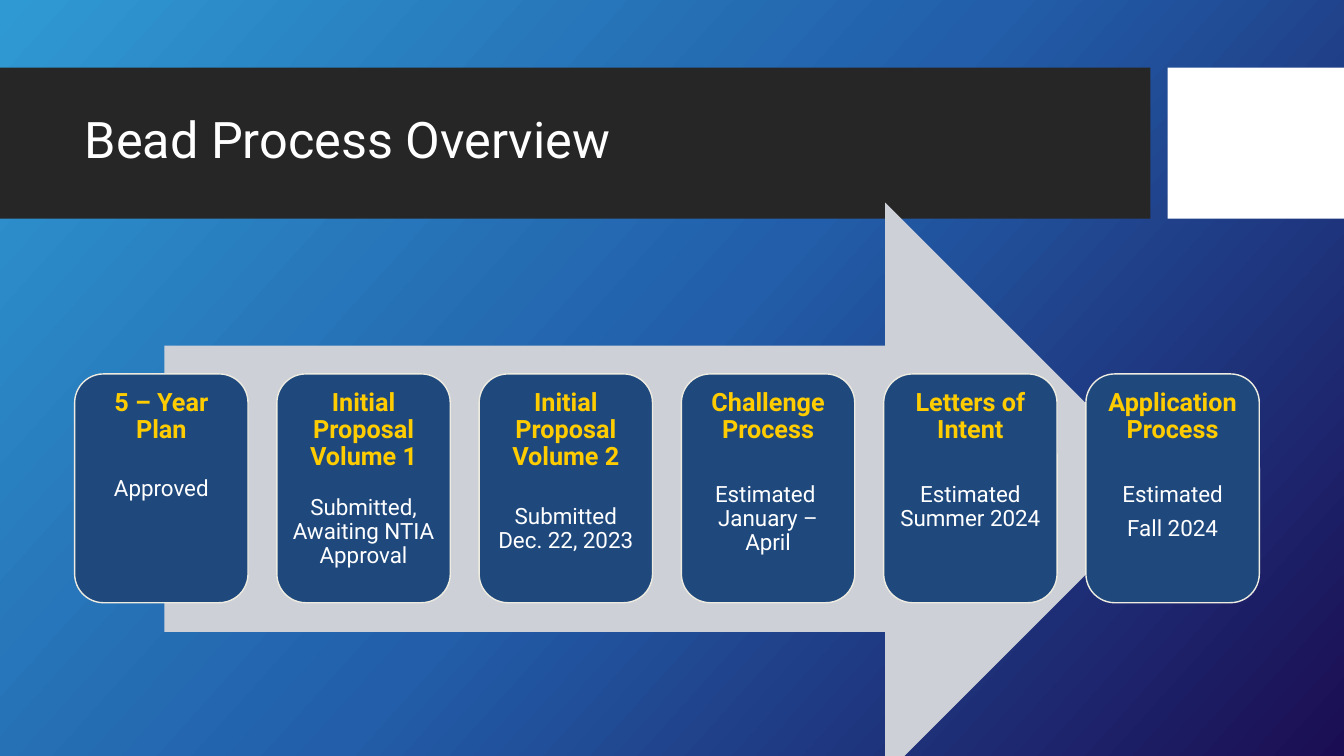
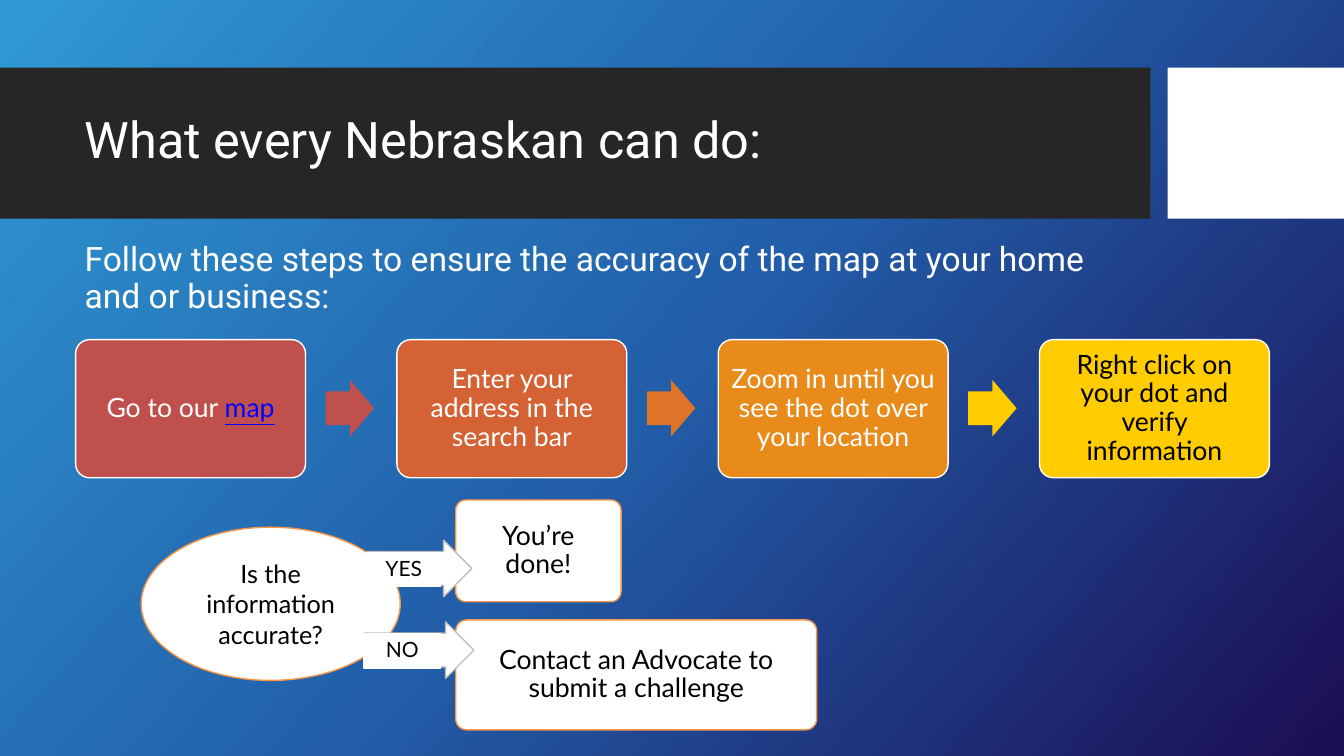
from copy import deepcopy

from pptx import Presentation
from pptx.dml.color import RGBColor
from pptx.enum.shapes import MSO_SHAPE
from pptx.enum.text import MSO_ANCHOR, MSO_AUTO_SIZE, PP_ALIGN
from pptx.util import Inches, Pt

WHITE, BLACK, DARK = "FFFFFF", "000000", "262626"
NAVY, CREAM, GOLD = "1F497D", "EEECE1", "FFCC00"
RED, RUST, AMBER, ORANGE = "C0504D", "D46234", "E98B1A", "F79646"
SILVER, GREY, BLUE = "CDD0D7", "BDBDBD", "0000FF"
GLOW = [(0, "2F99D3"), (0.5, "225EA9"), (1, "1B0D53")]
HEAD, BODY = "Roboto", "Lato"

CARDS = [
    ("5 – Year Plan", 24, ["Approved"], 0),
    ("Initial Proposal Volume 1", 18, ["Submitted, Awaiting NTIA Approval"], 0),
    ("Initial Proposal Volume 2", 24, ["Submitted Dec. 22, 2023"], 0),
    ("Challenge Process", 28, ["Estimated ", "January – April"], 0),
    ("Letters of Intent", 28, ["Estimated", "Summer 2024"], 0),
    ("Application Process", 28, ["Estimated", "Fall 2024"], 7),
]
STEPS = [
    (["Go to our ", "map"], RED, WHITE, RED),
    (["Enter your address in the search bar"], RUST, WHITE, "DF7327"),
    (["Zoom in until you see the dot over your location"], AMBER, WHITE, GOLD),
    (["Right click on your dot and verify information"], GOLD, BLACK, None),
]


def color(code):
    """Turn a hex string into a colour."""
    return RGBColor.from_string(code)


def frame(shape, inset=None, anchor=MSO_ANCHOR.MIDDLE):
    """Set wrap, anchor and insets of a text frame and return it."""
    text = shape.text_frame
    text.word_wrap = True
    text.auto_size = MSO_AUTO_SIZE.NONE
    text.vertical_anchor = anchor
    if inset is not None:
        text.margin_left = text.margin_right = Inches(inset)
        text.margin_top = text.margin_bottom = Inches(inset)
    return text


def style(para, align=PP_ALIGN.CENTER, gap=0, lines=0.9):
    """Set alignment and spacing of a paragraph and return it."""
    para.alignment = align
    para.line_spacing = lines
    para.space_before = Pt(gap)
    para.space_after = Pt(0)
    return para


def write(para, text, size, ink, font=BODY, bold=False, under=False):
    """Add one formatted run."""
    run = para.add_run()
    run.text = text
    run.font.size = Pt(size)
    run.font.name = font
    run.font.bold = bold
    run.font.underline = under
    run.font.color.rgb = color(ink)


def block(slide, kind, box, fill, line=None, adjust=()):
    """Add a flat preset shape."""
    shape = slide.shapes.add_shape(kind, *map(Inches, box))
    shape.shadow.inherit = False
    shape.fill.solid()
    shape.fill.fore_color.rgb = color(fill)
    if line:
        shape.line.color.rgb = color(line)
        shape.line.width = Pt(1)
    else:
        shape.line.fill.background()
    for spot, value in enumerate(adjust):
        shape.adjustments[spot] = value
    return shape


def panel(slide, box, fill, line, texts, ink):
    """Add a rounded box; a second text is underlined as a link."""
    shape = block(slide, MSO_SHAPE.ROUNDED_RECTANGLE, box, fill, line, [0.1])
    para = style(frame(shape, 0.08).paragraphs[0])
    write(para, texts[0], 19, ink)
    for text in texts[1:]:
        write(para, text, 19, BLUE, under=True)


def card(slide, left, name, gap, notes, step):
    """Add a stage card with a gold name and white notes."""
    box = (left, 3.71, 1.72, 2.27)
    shape = block(slide, MSO_SHAPE.ROUNDED_RECTANGLE, box, NAVY, CREAM)
    text = frame(shape, 0.07, MSO_ANCHOR.TOP)
    write(style(text.paragraphs[0]), name, 18, GOLD, HEAD, bold=True)
    for spot, note in enumerate(notes):
        para = style(text.add_paragraph(), gap=step if spot else gap)
        write(para, note, 16, WHITE, HEAD)


def branch(slide, left, top, width, reach, text):
    """Add an answer arrow with its label."""
    box = (left, top, width, 0.56)
    block(slide, MSO_SHAPE.RIGHT_ARROW, box, WHITE, GREY, [0.6, 0.5])
    label = block(slide, MSO_SHAPE.RECTANGLE,
                  (left, top + 0.12, reach, 0.34), WHITE, WHITE)
    write(style(frame(label, 0).paragraphs[0]), text, 15, BLACK)


def theme(layout, slide):
    """Give the layout its gradient and title bands."""
    fill = layout.background.fill
    fill.gradient()
    fill.gradient_angle = 318
    stops = layout.element.xpath(".//a:gsLst")[0]
    stops.insert(1, deepcopy(stops[0]))
    for stop, (place, code) in zip(fill.gradient_stops, GLOW):
        stop.position = place
        stop.color.rgb = color(code)
    bands = [(0, 11.41, DARK), (11.58, 1.75, WHITE)]
    for spot, (left, width, code) in enumerate(bands):
        band = block(slide, MSO_SHAPE.RECTANGLE, (left, 0.67, width, 1.5), code)
        band.element.nvSpPr.cNvPr.set("id", str(20 + spot))
        layout.shapes.element.insert(2 + spot, band.element)


def head(slide, text):
    """Place and fill the title."""
    title = slide.shapes.title
    title.left, title.top = Inches(0.74), Inches(0.82)
    title.width, title.height = Inches(10.51), Inches(1.18)
    para = style(frame(title).paragraphs[0], PP_ALIGN.LEFT)
    write(para, text, 36, WHITE, HEAD)


def stages(slide):
    """Build the process overview."""
    head(slide, "Bead Process Overview")
    block(slide, MSO_SHAPE.RIGHT_ARROW, (1.63, 2.01, 9.99, 5.68), SILVER)
    pitch = (10.77 - 0.74) / (len(CARDS) - 1)
    for spot, entry in enumerate(CARDS):
        card(slide, 0.74 + spot * pitch, *entry)


def guide(slide):
    """Build the map check steps and the decision."""
    head(slide, "What every Nebraskan can do:")
    lead = slide.shapes.add_textbox(*map(Inches, (0.74, 2.36, 10.51, 0.88)))
    para = style(frame(lead, anchor=MSO_ANCHOR.TOP).paragraphs[0], PP_ALIGN.LEFT)
    write(para, "Follow these steps to ensure the accuracy of the map "
          "at your home and or business:", 24, WHITE, HEAD)
    pitch = (10.31 - 0.75) / (len(STEPS) - 1)
    for spot, (texts, fill, ink, tip) in enumerate(STEPS):
        left = 0.75 + spot * pitch
        panel(slide, (left, 3.37, 2.28, 1.37), fill, WHITE, texts, ink)
        if tip:
            block(slide, MSO_SHAPE.RIGHT_ARROW, (left + 2.48, 3.77, 0.48, 0.56),
                  tip, adjust=[0.6, 0.5])
    panel(slide, (4.52, 4.96, 1.64, 1.01), WHITE, ORANGE, ["You’re done!"], BLACK)
    panel(slide, (4.52, 6.15, 3.58, 1.09), WHITE, ORANGE,
          ["Contact an Advocate to submit a challenge"], BLACK)
    query = block(slide, MSO_SHAPE.OVAL, (1.4, 5.23, 2.57, 1.52), WHITE, ORANGE)
    para = style(frame(query).paragraphs[0], lines=1)
    write(para, "Is the information accurate?", 18, BLACK)
    branch(slide, 3.64, 5.36, 1.04, 0.73, "YES")
    branch(slide, 3.61, 6.17, 1.09, 0.76, "NO")


def main():
    """Build and save the deck."""
    deck = Presentation()
    deck.slide_width, deck.slide_height = Inches(13.33), Inches(7.5)
    layout = deck.slide_layouts[5]
    first, second = [deck.slides.add_slide(layout) for _ in range(2)]
    theme(layout, first)
    stages(first)
    guide(second)
    deck.save("out.pptx")


if __name__ == "__main__":
    main()
